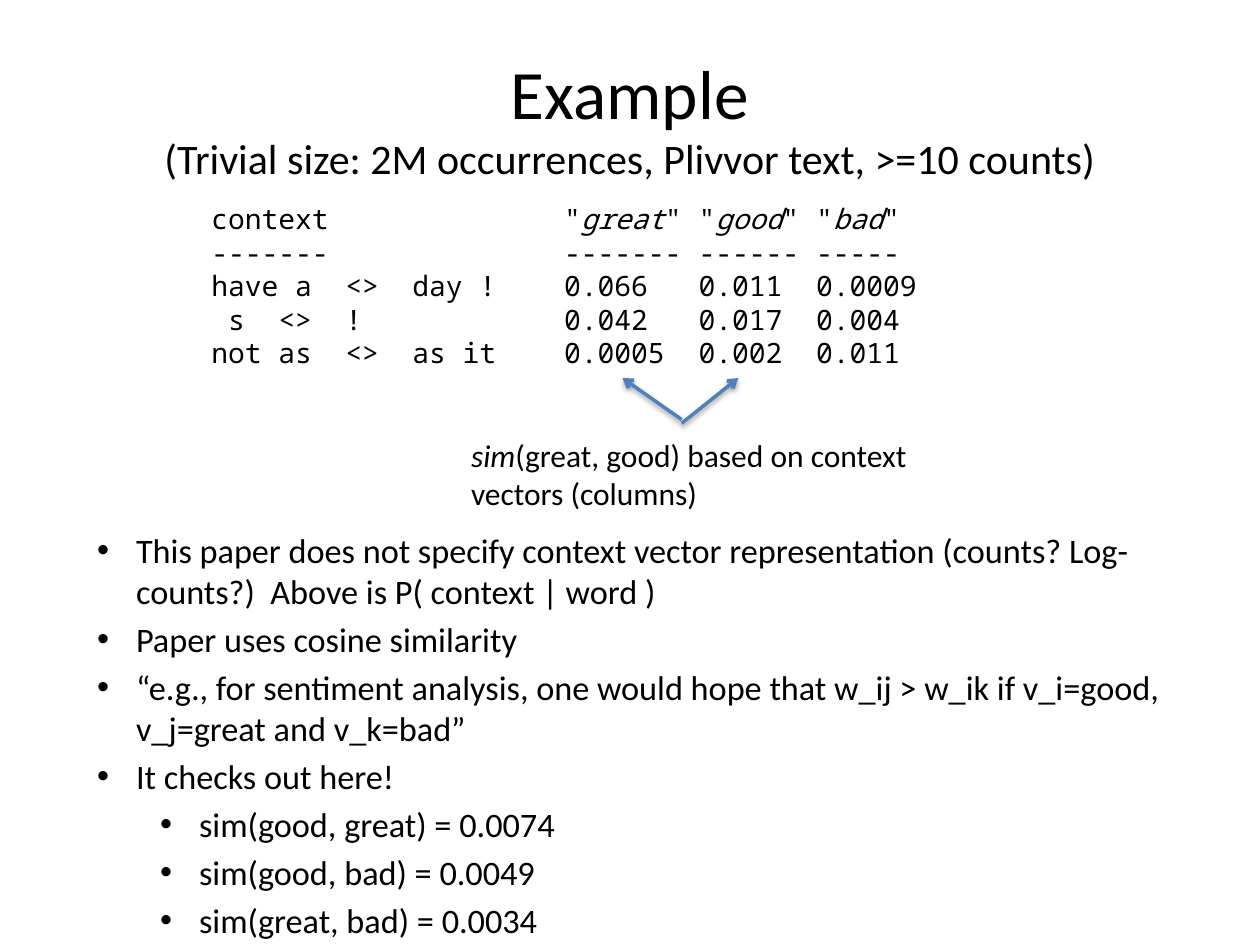
from lxml import etree
from pptx import Presentation
from pptx.dml.color import RGBColor
from pptx.enum.shapes import MSO_CONNECTOR
from pptx.enum.text import MSO_ANCHOR, MSO_AUTO_SIZE, PP_ALIGN
from pptx.oxml.ns import qn
from pptx.util import Inches, Pt

STRAIGHT = MSO_CONNECTOR.STRAIGHT
TOP, MIDDLE = MSO_ANCHOR.TOP, MSO_ANCHOR.MIDDLE
LEFT, CENTER = PP_ALIGN.LEFT, PP_ALIGN.CENTER
NO_FIT = MSO_AUTO_SIZE.NONE

COLORS = {"text": "000000", "arrow": "4F81BD", "shadow": "000000", "page": "FFFFFF"}
SANS, MONO = "Calibri", "Noto Sans Mono"
MONO_SIZE = 16
CHAR_WIDTH = 0.6 * MONO_SIZE  # points per monospaced character

# The slide is a grid of 100 columns by 75 rows
COLUMNS, ROWS = 100, 75
WIDTH, HEIGHT = Inches(10), Inches(7.5)

# Each context row: label and one value per word; * marks italics
CONTEXT_ROWS = [
    ("context", '"*great*"', '"*good*"', '"*bad*"'),
    ("-------", "-------", "------", "-----"),
    ("have a  <>  day !", "0.066", "0.011", "0.0009"),
    (" s  <>  !", "0.042", "0.017", "0.004"),
    ("not as  <>  as it", "0.0005", "0.002", "0.011"),
]
WORD_STARTS = (21, 29, 36)  # in characters

REMARKS = [
    (0, "This paper does not specify context vector representation "
        "(counts? Log-counts?)  Above is P( context | word )"),
    (0, "Paper uses cosine similarity"),
    (0, "“e.g., for sentiment analysis, one would hope that w_ij > w_ik "
        "if v_i=good, v_j=great and v_k=bad”"),
    (0, "It checks out here!"),
    (1, "sim(good, great) = 0.0074"),
    (1, "sim(good, bad) = 0.0049"),
    (1, "sim(great, bad) = 0.0034"),
]


def col(n):
    return round(WIDTH * n / COLUMNS)


def row(n):
    return round(HEIGHT * n / ROWS)


def place(shape, box):
    left, top, width, height = box
    shape.left, shape.top = col(left), row(top)
    shape.width, shape.height = col(width), row(height)


def prepare_frame(shape, anchor):
    frame = shape.text_frame
    frame.word_wrap = True
    frame.auto_size = NO_FIT
    frame.vertical_anchor = anchor
    return frame


def next_paragraph(frame, index):
    return frame.paragraphs[0] if index == 0 else frame.add_paragraph()


def write(paragraph, text, size, font=SANS, color="text", align=LEFT):
    """Adds text to a paragraph; parts between asterisks are italic."""
    paragraph.alignment = align
    for index, part in enumerate(text.split("*")):
        if part:
            run = paragraph.add_run()
            run.text = part
            run.font.size = Pt(size)
            run.font.name = font
            run.font.italic = index % 2 == 1
            run.font.color.rgb = RGBColor.from_string(COLORS[color])


def add_text_box(slide, box):
    shape = slide.shapes.add_textbox(0, 0, 0, 0)
    place(shape, box)
    return prepare_frame(shape, TOP)


def fill_title(slide, box):
    title = slide.shapes.title
    place(title, box)
    heading = prepare_frame(title, MIDDLE).paragraphs[0]
    write(heading, "Example", 39.6, align=CENTER)
    heading.add_line_break()
    write(heading, "(Trivial size: 2M occurrences, Plivvor text, >=10 counts)",
          24, align=CENTER)


def add_context_vectors(slide, box):
    frame = add_text_box(slide, box)
    for index, cells in enumerate(CONTEXT_ROWS):
        line = next_paragraph(frame, index)
        write(line, "\t".join(cells), MONO_SIZE, font=MONO)
        stops = etree.SubElement(line._p.get_or_add_pPr(), qn("a:tabLst"))
        for start in WORD_STARTS:
            etree.SubElement(stops, qn("a:tab"),
                             pos=str(Pt(start * CHAR_WIDTH)), algn="l")


def add_arrow(slide, start, end):
    arrow = slide.shapes.add_connector(
        STRAIGHT, col(start[0]), row(start[1]), col(end[0]), row(end[1]))
    arrow.line.color.rgb = RGBColor.from_string(COLORS["arrow"])
    arrow.line.width = Pt(2)
    etree.SubElement(arrow.line._get_or_add_ln(), qn("a:tailEnd"), type="arrow")
    # Soft shadow straight below the line
    effects = etree.SubElement(arrow._element.spPr, qn("a:effectLst"))
    shadow = etree.SubElement(
        effects, qn("a:outerShdw"), blurRad=str(Pt(3.1)), dist=str(Pt(1.6)),
        dir="5400000", rotWithShape="0")
    tint = etree.SubElement(shadow, qn("a:srgbClr"), val=COLORS["shadow"])
    etree.SubElement(tint, qn("a:alpha"), val="38000")


def add_similarity_note(slide, box):
    left, top = box[:2]
    add_arrow(slide, (left + 17.7, top - 0.8), (left + 13, top - 4.1))
    add_arrow(slide, (left + 17.7, top - 0.5), (left + 22.2, top - 4.1))
    note = add_text_box(slide, box).paragraphs[0]
    write(note, "*sim*(great, good) based on context vectors (columns)", 18)


def fill_remarks(slide, box):
    body = slide.placeholders[1]
    place(body, box)
    frame = prepare_frame(body, TOP)
    for index, (level, text) in enumerate(REMARKS):
        remark = next_paragraph(frame, index)
        remark.level = level
        write(remark, text, 19.6)
        props = remark._p.get_or_add_pPr()
        props.set("marL", str(Inches(0.31 + 0.5 * level)))
        props.set("indent", str(-Inches(0.31)))
        etree.SubElement(props, qn("a:buFont"), typeface="Arial")
        etree.SubElement(props, qn("a:buChar"), char="•")


def main():
    deck = Presentation()
    deck.slide_width, deck.slide_height = WIDTH, HEIGHT
    slide = deck.slides.add_slide(deck.slide_layouts[1])
    slide.background.fill.solid()
    slide.background.fill.fore_color.rgb = RGBColor.from_string(COLORS["page"])

    fill_title(slide, (5, 3, 90, 12.5))
    add_context_vectors(slide, (15.8, 15.5, 65, 19.9))
    add_similarity_note(slide, (36.4, 34.1, 40, 7.1))
    fill_remarks(slide, (6.7, 41.5, 90, 29.9))
    deck.save("out.pptx")


if __name__ == "__main__":
    main()
